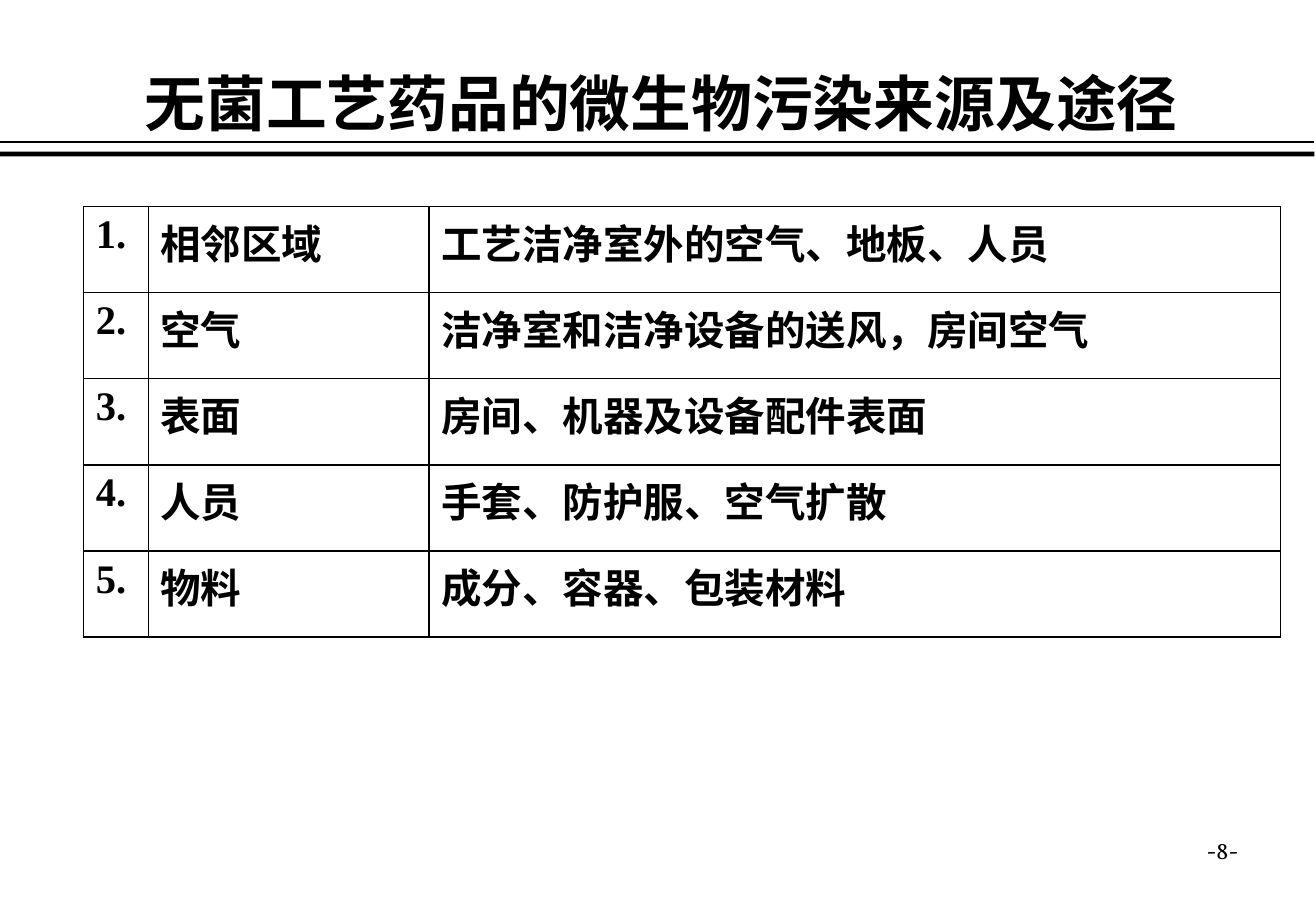
from lxml.etree import SubElement
from pptx import Presentation
from pptx.dml.color import RGBColor
from pptx.enum.shapes import MSO_CONNECTOR as Connector, MSO_SHAPE as Shape
from pptx.enum.text import MSO_ANCHOR as Anchor, MSO_AUTO_SIZE as AutoSize, PP_ALIGN as Align
from pptx.oxml import parse_xml
from pptx.oxml.ns import nsdecls, qn
from pptx.util import Cm, Pt

BLACK = "000000"


def color(value):
    return RGBColor.from_string(value)


def write(frame, text, size=24, font="Times New Roman", bold=True, align=Align.LEFT):
    frame.word_wrap = True
    paragraph = frame.paragraphs[0]
    paragraph.alignment = align
    run = paragraph.add_run()
    run.text = text
    run.font.size = Pt(size)
    run.font.name = font
    run.font.bold = bold
    run.font.color.rgb = color(BLACK)


prs = Presentation()
prs.slide_width, prs.slide_height = Cm(27.51), Cm(19.05)
slide = prs.slides.add_slide(prs.slide_layouts[5])

thick_rule = slide.shapes.add_shape(Shape.RECTANGLE, 0, Cm(3.17), Cm(27.48), Cm(0.1))
thick_rule.shadow.inherit = False
thick_rule.fill.solid()
thick_rule.fill.fore_color.rgb = color(BLACK)
thick_rule.line.fill.background()

thin_rule = slide.shapes.add_connector(Connector.STRAIGHT, 0, Cm(2.97), Cm(27.46), Cm(2.97))
thin_rule.line.color.rgb = color(BLACK)
thin_rule.line.width = Pt(1)
SubElement(thin_rule._element.spPr, qn("a:effectLst"))

heading = slide.shapes.title
heading.left, heading.top, heading.width, heading.height = Cm(0.97), Cm(1.12), Cm(25.7), Cm(1.9)
heading.text_frame.auto_size = AutoSize.NONE
heading.text_frame.vertical_anchor = Anchor.BOTTOM
write(heading.text_frame, "无菌工艺药品的微生物污染来源及途径", size=36, font="Vollkorn", align=Align.CENTER)

page_number = slide.shapes.add_textbox(Cm(19.71), Cm(17.35), Cm(6.43), Cm(1.32))
write(page_number.text_frame, "-8-", size=14, font="Vollkorn", bold=False, align=Align.RIGHT)

sources = [
    ("相邻区域", "工艺洁净室外的空气、地板、人员"),
    ("空气", "洁净室和洁净设备的送风，房间空气"),
    ("表面", "房间、机器及设备配件表面"),
    ("人员", "手套、防护服、空气扩散"),
    ("物料", "成分、容器、包装材料"),
]
column_widths = [1.35, 5.87, 17.8]
row_height = 1.8
source_table = slide.shapes.add_table(
    len(sources), len(column_widths), Cm(1.75), Cm(4.32),
    Cm(sum(column_widths)), Cm(row_height * len(sources))).table
source_table.first_row = False
source_table.horz_banding = False
for column, width in zip(source_table.columns, column_widths):
    column.width = Cm(width)

for number, (source, route) in enumerate(sources, 1):
    source_table.rows[number - 1].height = Cm(row_height)
    for column_index, text in enumerate((f"{number}.", source, route)):
        cell = source_table.cell(number - 1, column_index)
        write(cell.text_frame, text)
        cell.fill.background()
        properties = cell._tc.get_or_add_tcPr()
        for position, side in enumerate(("lnL", "lnR", "lnT", "lnB")):
            properties.insert(position, parse_xml(
                f'<a:{side} {nsdecls("a")} w="12700"><a:solidFill>'
                f'<a:srgbClr val="{BLACK}"/></a:solidFill></a:{side}>'))

prs.save("out.pptx")
